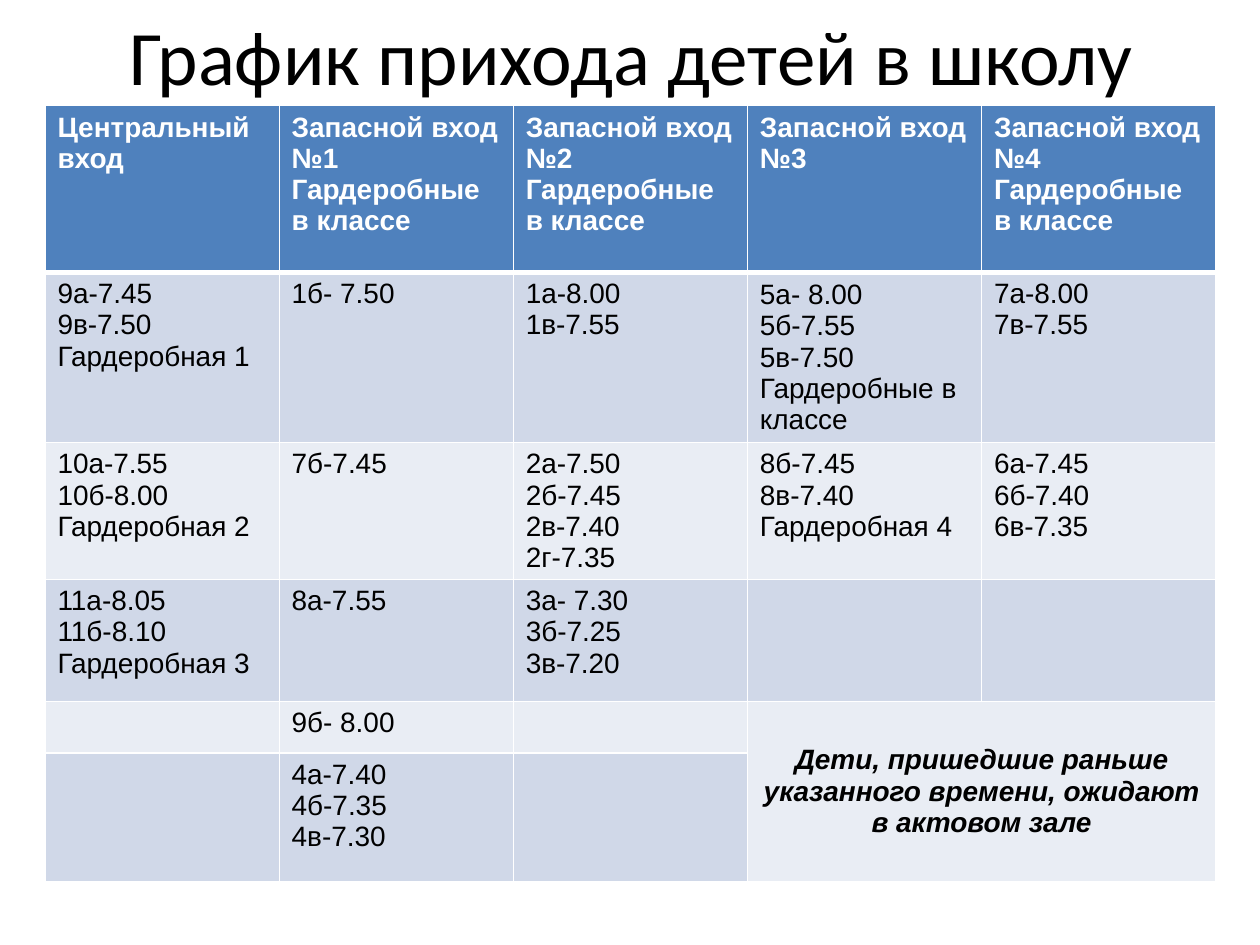
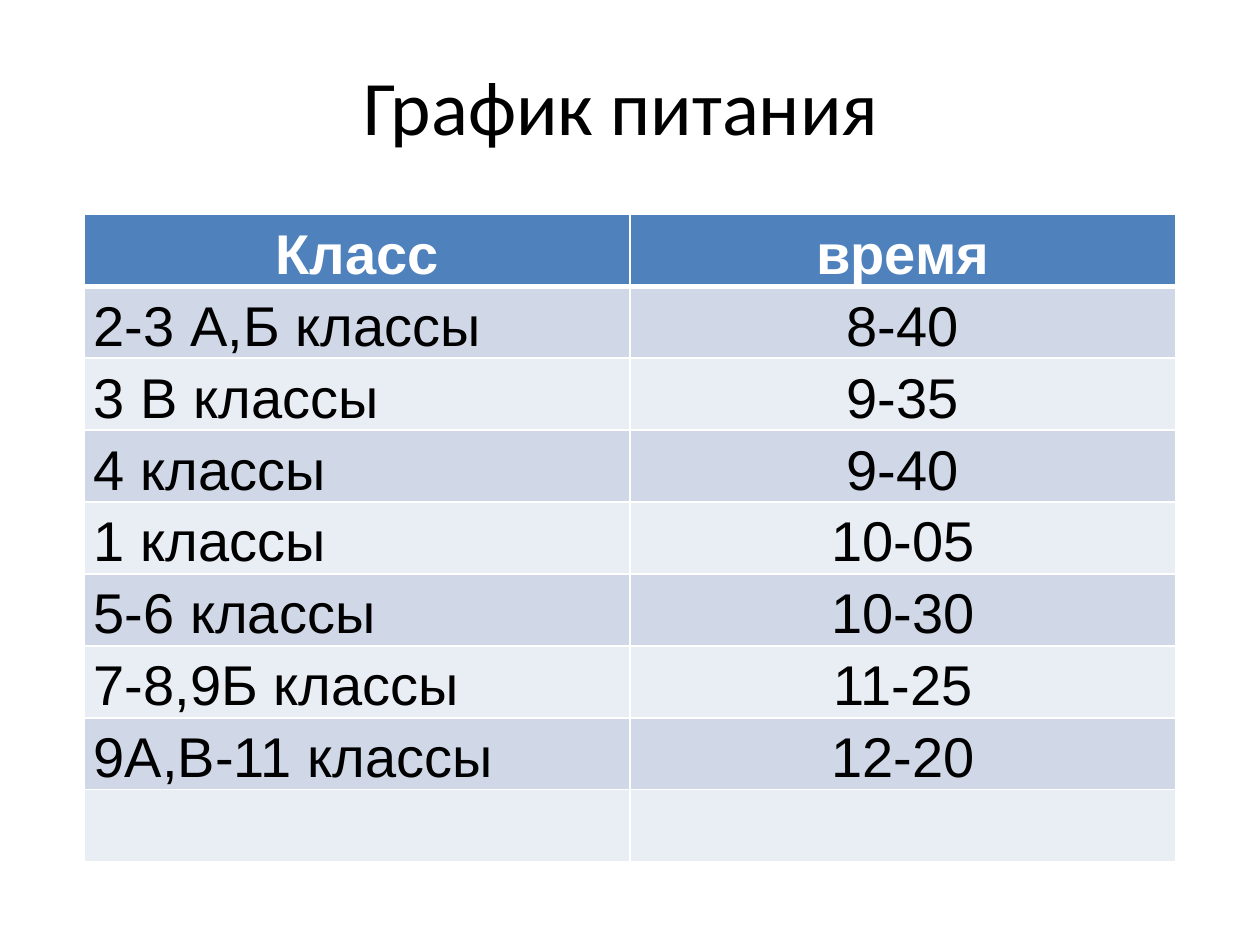
from lxml import etree
from pptx import Presentation
from pptx.dml.color import RGBColor
from pptx.enum.text import MSO_ANCHOR as Anchor, PP_ALIGN as Align
from pptx.oxml.ns import qn
from pptx.util import Cm, Pt

COLORS = {"text": "000000", "header_text": "FFFFFF", "border": "FFFFFF",
          "header": "4F81BD", "odd_row": "D0D8E8", "even_row": "E9EDF4"}
BODY_FONT, TITLE_FONT = "Arial", "Calibri"

ARRIVALS = [
    ["Центральный вход", "Запасной вход №1\nГардеробные в классе",
     "Запасной вход №2\nГардеробные в классе", "Запасной вход №3",
     "Запасной вход №4\nГардеробные в классе"],
    ["9а-7.45\n9в-7.50\nГардеробная 1", "1б- 7.50", "1а-8.00\n1в-7.55",
     "5а- 8.00\n5б-7.55\n5в-7.50 Гардеробные в классе", "7а-8.00\n7в-7.55"],
    ["10а-7.55\n10б-8.00\nГардеробная 2", "7б-7.45",
     "2а-7.50\n2б-7.45\n2в-7.40\n2г-7.35",
     "8б-7.45\n8в-7.40\nГардеробная 4", "6а-7.45\n6б-7.40\n6в-7.35"],
    ["11а-8.05\n11б-8.10\nГардеробная 3", "8а-7.55",
     "3а- 7.30\n3б-7.25\n3в-7.20", "", ""],
    ["", "9б- 8.00", "", "", ""],
    ["", "4а-7.40\n4б-7.35\n4в-7.30", "", "", ""],
]
ARRIVAL_HEIGHTS = [3.36, 3.43, 2.76, 2.46, 1.04, 2.59]
FULL_CELLS = [(1, 3), (2, 2)]  # their text takes the whole row height
EARLY_NOTE = "Дети, пришедшие раньше указанного времени, ожидают в актовом зале"

MEALS = [
    ["Класс", "время"],
    ["2-3 А,Б классы", "8-40"],
    ["3 В классы", "9-35"],
    ["4 классы", "9-40"],
    ["1 классы", "10-05"],
    ["5-6 классы", "10-30"],
    ["7-8,9Б классы", "11-25"],
    ["9А,В-11 классы", "12-20"],
    ["", ""],
]


def write(frame, text, size, font=BODY_FONT, color="text", bold=False,
          italic=False, align=Align.LEFT, spacing=None):
    """Put each line of text into its own paragraph."""
    for index, line in enumerate(text.split("\n")):
        paragraph = frame.add_paragraph() if index else frame.paragraphs[0]
        paragraph.alignment = align
        paragraph.line_spacing = spacing
        run = paragraph.add_run()
        run.text = line
        run.font.name, run.font.size = font, Pt(size)
        run.font.bold, run.font.italic = bold, italic
        run.font.color.rgb = RGBColor.from_string(COLORS[color])


def add_title(slide, text, left, top, width, height):
    frame = slide.shapes.add_textbox(Cm(left), Cm(top), Cm(width), Cm(height)).text_frame
    frame.word_wrap = True
    frame.vertical_anchor = Anchor.MIDDLE
    write(frame, text, 44, font=TITLE_FONT, align=Align.CENTER)


def set_borders(cell, top, bottom):
    """Draw the four edges; top and bottom are widths in points."""
    properties = cell._tc.get_or_add_tcPr()
    for index, (side, width) in enumerate(zip("LRTB", (1, 1, top, bottom))):
        line = etree.Element(qn(f"a:ln{side}"), w=str(Pt(width)))
        fill = etree.SubElement(line, qn("a:solidFill"))
        etree.SubElement(fill, qn("a:srgbClr"), val=COLORS["border"])
        properties.insert(index, line)


def fit_cell(cell, anchor):
    """Let the text use the full height of the cell."""
    cell.margin_top = cell.margin_bottom = Cm(0)
    cell.vertical_anchor = anchor


def add_schedule(slide, rows, left, top, column_width, heights, size,
                 aligns, header_align, spacing=None, side_inset=0.25):
    """Add a table with a header row and banded body rows."""
    columns = len(rows[0])
    table = slide.shapes.add_table(len(rows), columns, Cm(left), Cm(top),
                                   Cm(column_width * columns), Cm(sum(heights))).table
    for column in table.columns:
        column.width = Cm(column_width)
    for r, (texts, height) in enumerate(zip(rows, heights)):
        table.rows[r].height = Cm(height)
        is_header = r == 0
        band = "header" if is_header else "odd_row" if r % 2 else "even_row"
        for c, text in enumerate(texts):
            cell = table.cell(r, c)
            cell.fill.solid()
            cell.fill.fore_color.rgb = RGBColor.from_string(COLORS[band])
            set_borders(cell, top=3 if r == 1 else 1, bottom=3 if is_header else 1)
            cell.margin_left = cell.margin_right = Cm(side_inset)
            if text:
                write(cell.text_frame, text, size, bold=is_header, spacing=spacing,
                      color="header_text" if is_header else "text",
                      align=header_align if is_header else aligns[c])
    return table


def add_arrival_slide(slide):
    add_title(slide, "График прихода детей в школу ", 1.7, 0.33, 22.43, 1.55)
    table = add_schedule(slide, ARRIVALS, 0.91, 2.13, 4.72, ARRIVAL_HEIGHTS, 16,
                         [Align.LEFT] * 5, Align.LEFT)
    for row, column in FULL_CELLS:
        fit_cell(table.cell(row, column), Anchor.MIDDLE)
    note = table.cell(4, 3)
    note.merge(table.cell(5, 4))
    note.vertical_anchor = Anchor.MIDDLE
    write(note.text_frame, EARLY_NOTE, 16, bold=True, italic=True, align=Align.CENTER)


def add_meal_slide(slide):
    add_title(slide, "График питания", 1.09, 0.53, 22.86, 3.18)
    table = add_schedule(slide, MEALS, 1.7, 4.32, 11, [1.45] * len(MEALS), 32,
                         [Align.LEFT, Align.CENTER], Align.CENTER,
                         spacing=1.06, side_inset=0.19)
    for cell in table.iter_cells():
        fit_cell(cell, Anchor.BOTTOM)


def main():
    deck = Presentation()
    deck.slide_width, deck.slide_height = Cm(25.4), Cm(19.05)
    blank = deck.slide_layouts[6]
    for fill_slide in (add_arrival_slide, add_meal_slide):
        fill_slide(deck.slides.add_slide(blank))
    deck.save("out.pptx")


if __name__ == "__main__":
    main()
